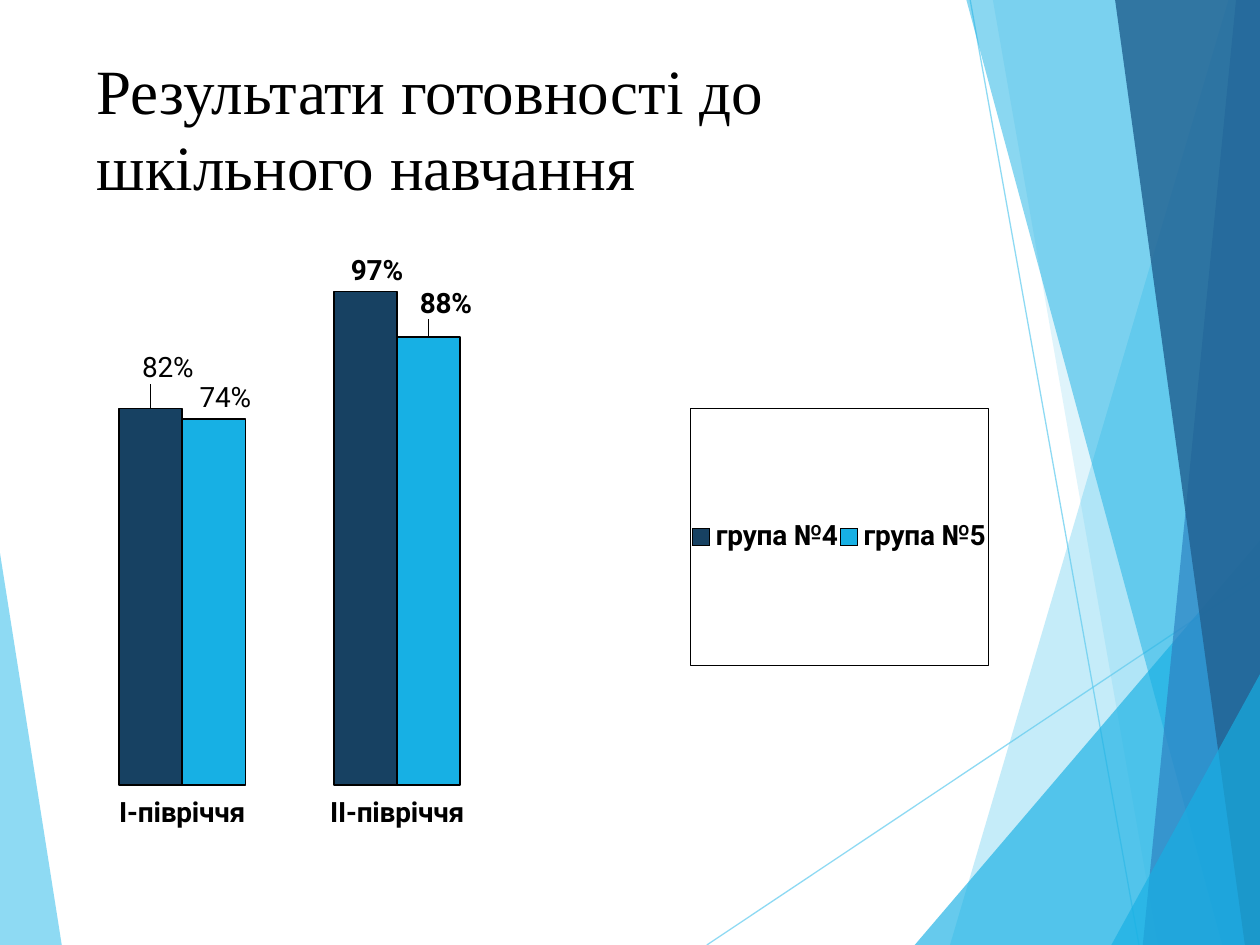
"""Build the school readiness slide with its column chart."""
from lxml import etree
from pptx import Presentation
from pptx.chart.data import CategoryChartData
from pptx.dml.color import RGBColor
from pptx.enum.chart import XL_CHART_TYPE, XL_LABEL_POSITION, XL_LEGEND_POSITION, XL_TICK_LABEL_POSITION
from pptx.enum.shapes import MSO_CONNECTOR
from pptx.enum.text import MSO_ANCHOR
from pptx.oxml import parse_xml
from pptx.oxml.ns import nsdecls, qn
from pptx.util import Inches, Pt

WIDTH, HEIGHT = 10, 7.5
COLORS = {"sky": "5FCBEF", "cyan": "17B0E4", "blue": "2E83C3",
          "deep": "226292", "navy": "174162", "black": "000000"}
TITLE = "Результати готовності до шкільного навчання"
TITLE_BOX = (0.67, 0.29, 6.94, 1.44)
TITLE_FORMAT = {"size": Pt(36), "name": "Times New Roman"}
CHART_BOX = (0.43, 1.74, 9.11, 5.09)
CHART_FORMAT = {"size": Pt(16), "name": "Roboto", "bold": True}
CATEGORIES = ["І-півріччя", "ІІ-півріччя", "", ""]
SERIES = [
    {"name": "група №4", "values": (0.74, 0.97, None, None), "color": "navy",
     "labels": [("82%", 0.015, -0.03), (None, 0.01, 0)]},
    {"name": "група №5", "values": (0.72, 0.88, None, None), "color": "cyan",
     "labels": [("74%", 0.01, 0), (None, 0.015, -0.02)]},
]
PLOT_SHARE = (0.018, 0.089, 0.749, 0.793)
LEGEND_SHARE = (0.554, 0.295, 0.26, 0.4)
LEFT_FACET = ("sky", 70, [(0, 4.39), (0.49, HEIGHT), (0, HEIGHT)])
LINES = [((5.61, HEIGHT), (WIDTH, 4.57)), ((7.7, 0), (9.04, HEIGHT))]
RIGHT_FACETS = [
    ("sky", 36, 9.75, 0, 7.54),
    ("sky", 20, 7.88, 0, 9.19),
    ("cyan", 66, WIDTH, 4.29, 7.26),
    ("cyan", 50, 7.67, 0, 9.7),
    ("blue", 70, 9.81, 0, 9.07),
    ("deep", 82, 8.85, 0, 9.88),
    ("cyan", 66, WIDTH, 5.35, 8.82),
]


def rgb(name):
    return RGBColor.from_string(COLORS[name])


def apply_format(font, values, color="black"):
    for attribute, value in values.items():
        setattr(font, attribute, value)
    font.color.rgb = rgb(color)


def set_alpha(shape, percent):
    color = next(shape._element.spPr.iter(qn("a:srgbClr")))
    etree.SubElement(color, qn("a:alpha")).set("val", str(percent * 1000))


def add_facet(slide, color, alpha, points):
    corners = [(Inches(x), Inches(y)) for x, y in points]
    builder = slide.shapes.build_freeform(*corners[0])
    builder.add_line_segments(corners[1:])
    shape = builder.convert_to_shape()
    shape.shadow.inherit = False
    shape.fill.solid()
    shape.fill.fore_color.rgb = rgb(color)
    shape.line.fill.background()
    set_alpha(shape, alpha)


def add_background(slide):
    add_facet(slide, *LEFT_FACET)
    for start, end in LINES:
        line = slide.shapes.add_connector(
            MSO_CONNECTOR.STRAIGHT, *map(Inches, start + end))
        line.line.color.rgb = rgb("sky")
        line.line.width = Pt(0.75)
        set_alpha(line, 70)
        etree.SubElement(line._element.spPr, qn("a:effectLst"))
    for color, alpha, top_x, top_y, bottom_x in RIGHT_FACETS:
        points = [(top_x, top_y), (bottom_x, HEIGHT), (WIDTH, HEIGHT), (WIDTH, top_y)]
        add_facet(slide, color, alpha, points if top_x < WIDTH else points[:3])


def add_title(slide):
    frame = slide.shapes.add_textbox(*map(Inches, TITLE_BOX)).text_frame
    frame.word_wrap = True
    frame.vertical_anchor = MSO_ANCHOR.MIDDLE
    run = frame.paragraphs[0].add_run()
    run.text = TITLE
    apply_format(run.font, TITLE_FORMAT)


def set_layout(parent, index, values, modes=()):
    for old in parent.findall(qn("c:layout")):
        parent.remove(old)
    layout = etree.Element(qn("c:layout"))
    manual = etree.SubElement(layout, qn("c:manualLayout"))
    entries = list(modes) + list(zip("xywh", values))
    for tag, value in entries:
        etree.SubElement(manual, qn(f"c:{tag}")).set("val", str(value))
    parent.insert(index, layout)


def format_series(series, source):
    series.format.fill.solid()
    series.format.fill.fore_color.rgb = rgb(source["color"])
    series.format.line.color.rgb = rgb("black")
    series.format.line.width = Pt(1)
    labels = series.data_labels
    labels.show_value = True
    labels.number_format = "0%"
    labels.number_format_is_linked = False
    apply_format(labels.font, CHART_FORMAT)
    for index, (text, x, y) in enumerate(source["labels"]):
        label = series.points[index].data_label
        if text:
            run = label.text_frame.paragraphs[0].add_run()
            run.text = text
            apply_format(run.font, {**CHART_FORMAT, "bold": False})
        else:
            apply_format(label.font, CHART_FORMAT)
        label.position = XL_LABEL_POSITION.OUTSIDE_END
        element = labels._element.findall(qn("c:dLbl"))[index]
        set_layout(element, 1, (x, y))


def add_legend(chart):
    chart.has_legend = True
    legend = chart.legend
    legend.position = XL_LEGEND_POSITION.RIGHT
    legend.include_in_layout = False
    apply_format(legend.font, CHART_FORMAT)
    edges = [("xMode", "edge"), ("yMode", "edge")]
    set_layout(legend._element, 1, LEGEND_SHARE, edges)
    border = parse_xml(
        f'<c:spPr {nsdecls("c", "a")}><a:noFill/><a:ln w="3175"><a:solidFill>'
        f'<a:srgbClr val="{COLORS["black"]}"/></a:solidFill></a:ln></c:spPr>')
    legend._element.find(qn("c:txPr")).addprevious(border)


def add_results_chart(slide):
    data = CategoryChartData(number_format="0%")
    data.categories = CATEGORIES
    for source in SERIES:
        data.add_series(source["name"], source["values"])
    chart = slide.shapes.add_chart(
        XL_CHART_TYPE.COLUMN_CLUSTERED, *map(Inches, CHART_BOX), data).chart
    chart.has_title = False
    apply_format(chart.font, CHART_FORMAT)
    plot = chart.plots[0]
    plot.gap_width, plot.overlap, plot.vary_by_categories = 140, 0, False
    for series, source in zip(plot.series, SERIES):
        format_series(series, source)
    category_axis, value_axis = chart.category_axis, chart.value_axis
    category_axis.format.line.fill.background()
    category_axis.tick_label_position = XL_TICK_LABEL_POSITION.LOW
    value_axis.minimum_scale, value_axis.maximum_scale = 0, 1
    value_axis.has_major_gridlines = False
    value_axis.visible = False
    add_legend(chart)
    modes = [("layoutTarget", "inner"), ("xMode", "edge"), ("yMode", "edge")]
    set_layout(chart._chartSpace.chart.plotArea, 0, PLOT_SHARE, modes)


def main():
    presentation = Presentation()
    presentation.slide_width, presentation.slide_height = Inches(WIDTH), Inches(HEIGHT)
    slide = presentation.slides.add_slide(presentation.slide_layouts[6])
    add_background(slide)
    add_title(slide)
    add_results_chart(slide)
    presentation.save("out.pptx")


if __name__ == "__main__":
    main()
